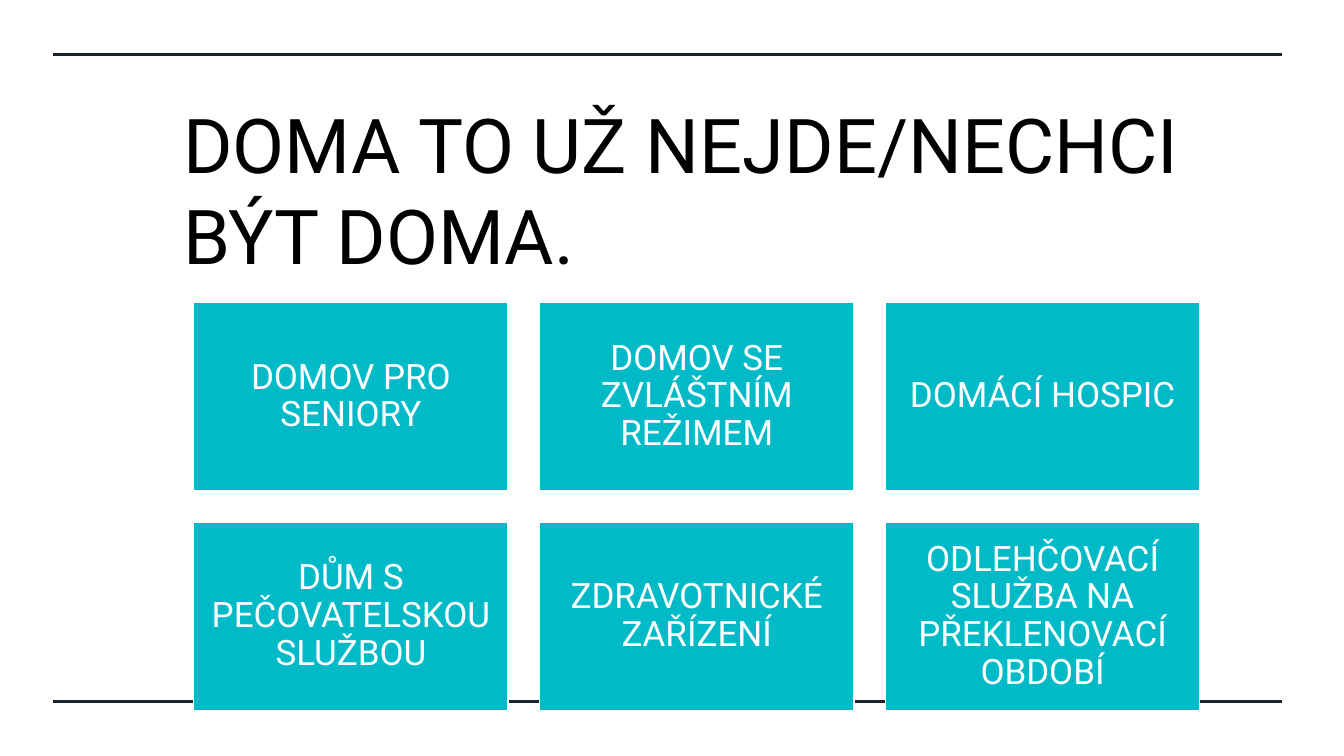
from dataclasses import dataclass

from lxml.etree import SubElement
from pptx import Presentation
from pptx.dml.color import RGBColor
from pptx.enum.shapes import MSO_CONNECTOR as Connector, MSO_SHAPE as Shape
from pptx.enum.text import MSO_ANCHOR as Anchor, PP_ALIGN as Align
from pptx.oxml.ns import qn
from pptx.util import Pt

PX = 9144  # 100 px to the inch


@dataclass(frozen=True)
class Theme:
    font: str = "Roboto"
    ink: RGBColor = RGBColor(0x00, 0x00, 0x00)
    white: RGBColor = RGBColor(0xFF, 0xFF, 0xFF)
    rule: RGBColor = RGBColor(0x18, 0x22, 0x30)
    card: RGBColor = RGBColor(0x00, 0xBA, 0xC8)
    title_size: Pt = Pt(54)
    card_size: Pt = Pt(25)
    rule_width: Pt = Pt(2.25)
    border_width: Pt = Pt(1)


THEME = Theme()

HEADING = "DOMA TO UŽ NEJDE/NECHCI BÝT DOMA."
SERVICES = [
    "DOMOV PRO SENIORY",
    "DOMOV SE ZVLÁŠTNÍM REŽIMEM",
    "DOMÁCÍ HOSPIC",
    "DŮM S PEČOVATELSKOU SLUŽBOU",
    "ZDRAVOTNICKÉ ZAŘÍZENÍ",
    "ODLEHČOVACÍ SLUŽBA NA PŘEKLENOVACÍ OBDOBÍ",
]


def emu(*lengths):
    return [length * PX for length in lengths]


def write(frame, text, size, color, anchor, align):
    frame.word_wrap = True
    frame.vertical_anchor = anchor
    frame.text = text
    paragraph = frame.paragraphs[0]
    paragraph.alignment = align
    font = paragraph.runs[0].font
    font.name, font.size, font.color.rgb = THEME.font, size, color
    return paragraph


def add_rules(slide, left, top, width, height):
    """Horizontal rules along the top and bottom of the box."""
    for y in (top, top + height):
        rule = slide.shapes.add_connector(
            Connector.STRAIGHT, *emu(left, y, left + width, y))
        rule.line.color.rgb = THEME.rule
        rule.line.width = THEME.rule_width
        SubElement(rule._element.spPr, qn("a:effectLst"))


def add_heading(slide, left, top, width, height):
    heading = slide.shapes.add_textbox(*emu(left, top, width, height))
    write(heading.text_frame, HEADING, THEME.title_size, THEME.ink,
          Anchor.BOTTOM, Align.LEFT)


def add_card(slide, service, left, top, width, height):
    card = slide.shapes.add_shape(
        Shape.RECTANGLE, *emu(left, top, width, height))
    card.shadow.inherit = False
    card.fill.solid()
    card.fill.fore_color.rgb = THEME.card
    card.line.color.rgb = THEME.white
    card.line.width = THEME.border_width
    frame = card.text_frame
    frame.margin_left, frame.margin_top = emu(10, 10)
    frame.margin_right, frame.margin_bottom = emu(10, 10)
    label = write(frame, service, THEME.card_size, THEME.white,
                  Anchor.MIDDLE, Align.CENTER)
    label.line_spacing = 0.9


def add_service_grid(slide, left, top, width, height, columns=3, gap=31):
    rows = -(-len(SERVICES) // columns)
    card_width = (width - gap * (columns - 1)) // columns
    card_height = (height - gap * (rows - 1)) // rows
    for index, service in enumerate(SERVICES):
        row, column = divmod(index, columns)
        add_card(slide, service,
                 left + column * (card_width + gap),
                 top + row * (card_height + gap),
                 card_width, card_height)


def main():
    deck = Presentation()
    deck.slide_width, deck.slide_height = emu(1333, 750)
    slide = deck.slides.add_slide(deck.slide_layouts[6])

    # Frame, heading, then the cards over the lower rule
    add_rules(slide, 53, 54, 1219, 642)
    add_heading(slide, 172, 107, 1121, 175)
    add_service_grid(slide, 192, 300, 998, 406)

    deck.save("out.pptx")


if __name__ == "__main__":
    main()
